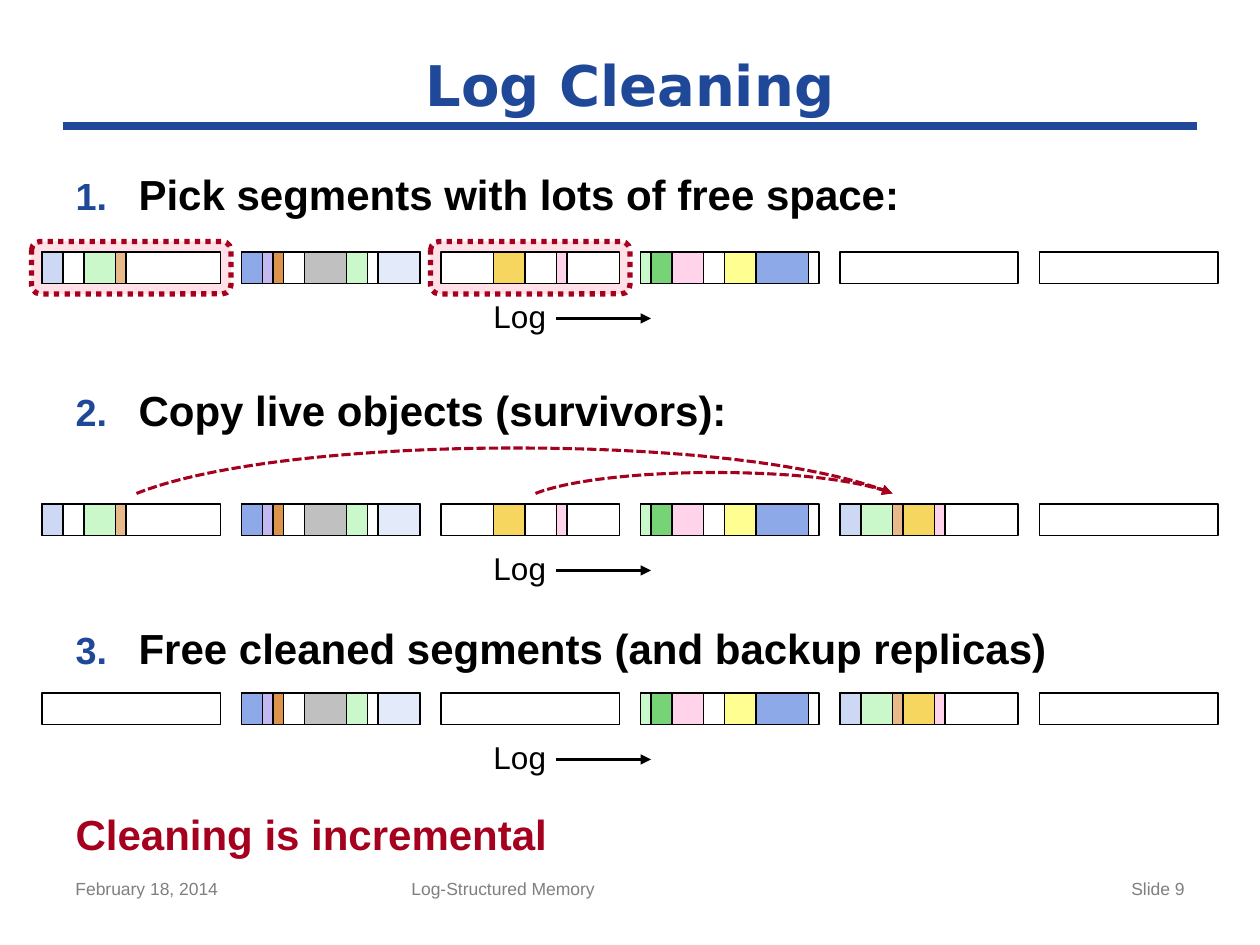
from dataclasses import dataclass

from lxml.etree import SubElement
from pptx import Presentation
from pptx.dml.color import RGBColor
from pptx.enum.dml import MSO_LINE
from pptx.enum.shapes import MSO_CONNECTOR, MSO_SHAPE
from pptx.enum.text import MSO_ANCHOR, MSO_AUTO_SIZE, PP_ALIGN
from pptx.oxml.ns import qn
from pptx.util import Pt


@dataclass(frozen=True)
class Theme:
    heading: str = "1F4899"
    accent: str = "A5001E"
    highlight: str = "FFE1E7"
    ink: str = "000000"
    paper: str = "FFFFFF"
    muted: str = "7F7F7F"
    periwinkle: str = "CCD8F4"
    mint: str = "CAF8CA"
    tan: str = "E8B989"
    gold: str = "F7D65F"
    pink: str = "FFD3E9"
    gray: str = "C0C0C0"
    blue: str = "8DA9E7"
    lilac: str = "C4B8F0"
    orange: str = "DC944C"
    ice: str = "E3EAF9"
    yellow: str = "FFFF91"
    green: str = "76D476"
    title_font: str = "DejaVu Sans"
    body_font: str = "Arial"
    title_size: int = 32
    body_size: int = 24
    label_size: int = 18
    footer_size: int = 10


T = Theme()

UNIT = 6                      # width of the smallest log object
SEGMENT_WIDTH = 17 * UNIT
SEGMENT_PITCH = 19 * UNIT
SEGMENT_HEIGHT = 18
LOG_LEFT = 24

# Live objects of each segment: (offset, width, colour), in units
FIRST = [(0, 2, T.periwinkle), (4, 3, T.mint), (7, 1, T.tan)]
SECOND = [(0, 2, T.blue), (2, 1, T.lilac), (3, 1, T.orange),
          (6, 4, T.gray), (10, 2, T.mint), (13, 4, T.ice)]
THIRD = [(5, 3, T.gold), (11, 1, T.pink)]
FOURTH = [(0, 1, T.mint), (1, 2, T.green), (3, 3, T.pink),
          (8, 3, T.yellow), (11, 5, T.blue)]


def pack(live_objects):
    """Place objects side by side from the start of a segment."""
    packed, offset = [], 0
    for _, width, color in live_objects:
        packed.append((offset, width, color))
        offset += width
    return packed


SURVIVORS = pack(FIRST + THIRD)


def place(shape, left, top, width, height):
    shape.left, shape.top = Pt(left), Pt(top)
    shape.width, shape.height = Pt(width), Pt(height)


def write(paragraph, text, size, color, font=T.body_font, bold=False,
          align=PP_ALIGN.LEFT, before=0):
    paragraph.alignment = align
    paragraph.space_before = Pt(before)
    run = paragraph.add_run()
    run.text = text
    run.font.name, run.font.size, run.font.bold = font, Pt(size), bold
    run.font.color.rgb = RGBColor.from_string(color)


def stroke(shape, color, width, dash=None, arrow=False):
    line = shape.line
    line.color.rgb = RGBColor.from_string(color)
    line.width = Pt(width)
    if dash:
        line.dash_style = dash
    if arrow:
        SubElement(line._get_or_add_ln(), qn("a:tailEnd"), type="triangle")


def add_box(slide, left, top, width, height, fill, color=T.ink, weight=1,
            dash=None, kind=MSO_SHAPE.RECTANGLE):
    box = slide.shapes.add_shape(kind, Pt(left), Pt(top), Pt(width), Pt(height))
    box.shadow.inherit = False
    box.fill.solid()
    box.fill.fore_color.rgb = RGBColor.from_string(fill)
    stroke(box, color, weight, dash)


def add_line(slide, start, end, color, weight, arrow=False):
    line = slide.shapes.add_connector(
        MSO_CONNECTOR.STRAIGHT, *(Pt(value) for value in (*start, *end)))
    stroke(line, color, weight, arrow=arrow)
    SubElement(line._element.spPr, qn("a:effectLst"))


def add_text(slide, left, top, width, height, text, inset=True, **style):
    textbox = slide.shapes.add_textbox(Pt(left), Pt(top), Pt(width), Pt(height))
    frame = textbox.text_frame
    frame.word_wrap = inset
    if not inset:
        frame.margin_left = frame.margin_right = 0
        frame.margin_top = frame.margin_bottom = 0
    write(frame.paragraphs[0], text, **style)


def add_title(slide, left, top, width, height):
    title = slide.shapes.title
    place(title, left, top, width, height)
    title.text_frame.vertical_anchor = MSO_ANCHOR.MIDDLE
    write(title.text_frame.paragraphs[0], "Log Cleaning", T.title_size,
          T.heading, font=T.title_font, bold=True, align=PP_ALIGN.CENTER)
    bottom = top + height
    add_line(slide, (left, bottom), (left + width, bottom), T.heading, 4.5)


def number(paragraph):
    properties = paragraph._p.get_or_add_pPr()
    properties.set("marL", str(Pt(36)))
    properties.set("indent", str(Pt(-36)))
    bullet_color = SubElement(properties, qn("a:buClr"))
    SubElement(bullet_color, qn("a:srgbClr"), val=T.heading)
    SubElement(properties, qn("a:buSzPct"), val="90000")
    SubElement(properties, qn("a:buFont"), typeface=T.body_font)
    SubElement(properties, qn("a:buAutoNum"), type="arabicPeriod")


def add_steps(slide, left, top, width, height):
    body = slide.placeholders[1]
    place(body, left, top, width, height)
    frame = body.text_frame
    frame.auto_size = MSO_AUTO_SIZE.NONE
    frame.margin_top = Pt(6)
    steps = [("Pick segments with lots of free space:", 0),
             ("Copy live objects (survivors):", 94.7),
             ("Free cleaned segments (and backup replicas)", 107.3)]
    for index, (step, before) in enumerate(steps):
        paragraph = frame.paragraphs[0] if index == 0 else frame.add_paragraph()
        write(paragraph, step, T.body_size, T.ink, bold=True, before=before)
        number(paragraph)
    conclusion = frame.add_paragraph()
    write(conclusion, "Cleaning is incremental", T.body_size, T.accent,
          bold=True, before=77.5)
    properties = conclusion._p.get_or_add_pPr()
    properties.set("marL", "0")
    properties.set("indent", "0")
    SubElement(properties, qn("a:buNone"))


def add_log(slide, left, top, segments, picked=()):
    """Draw a row of segments; those whose index is picked get a dotted frame."""
    for index, live_objects in enumerate(segments):
        start = left + index * SEGMENT_PITCH
        if index in picked:
            add_box(slide, start - UNIT, top - UNIT, SEGMENT_WIDTH + 2 * UNIT,
                    SEGMENT_HEIGHT + 2 * UNIT, T.highlight, T.accent, 3,
                    MSO_LINE.ROUND_DOT, MSO_SHAPE.ROUNDED_RECTANGLE)
        add_box(slide, start, top, SEGMENT_WIDTH, SEGMENT_HEIGHT, T.paper)
        for offset, width, color in live_objects:
            add_box(slide, start + offset * UNIT, top, width * UNIT,
                    SEGMENT_HEIGHT, color)
    add_text(slide, left + 258, top + 26, 30, 21.6, "Log", inset=False,
             size=T.label_size, color=T.ink, align=PP_ALIGN.CENTER)
    add_line(slide, (left + 294, top + 38), (left + 348, top + 38), T.ink, 1.5,
             arrow=True)


def add_copy_arc(slide, left, bottom, width, height):
    """Draw a dashed arrow as two mirrored cubic curves inside the box."""
    shares = [(0.1, 2 / 3), (0.3, 1), (0.5, 1), (0.7, 1), (0.9, 2 / 3), (1, 0)]
    builder = slide.shapes.build_freeform(Pt(left), Pt(bottom))
    builder.add_line_segments(
        [(Pt(left + width * across), Pt(bottom - height * rise))
         for across, rise in shares], close=False)
    arc = builder.convert_to_shape()
    outline = arc._element.spPr.find(".//" + qn("a:path"))
    lines = outline.findall(qn("a:lnTo"))
    for first in (0, 3):
        curve = SubElement(outline, qn("a:cubicBezTo"))
        for line in lines[first:first + 3]:
            curve.append(line[0])
            outline.remove(line)
    arc.shadow.inherit = False
    arc.fill.background()
    stroke(arc, T.accent, 1.75, MSO_LINE.SQUARE_DOT, arrow=True)
    arc.line._get_or_add_ln().find(qn("a:prstDash")).set("val", "sysDash")


def add_footer(slide, left, top, width, height):
    style = dict(size=T.footer_size, color=T.muted)
    side = 168
    add_text(slide, left, top, side, height, "February 18, 2014", **style)
    add_text(slide, left + 192, top, 270, height, "Log-Structured Memory", **style)
    add_text(slide, left + width - side, top, side, height, "Slide 9",
             align=PP_ALIGN.RIGHT, **style)


def main():
    deck = Presentation()
    deck.slide_width, deck.slide_height = Pt(720), Pt(540)
    slide = deck.slides.add_slide(deck.slide_layouts[1])
    add_title(slide, 36, 24, 648, 48)
    add_steps(slide, 36, 90, 648, 392)
    add_log(slide, LOG_LEFT, 144, [FIRST, SECOND, THIRD, FOURTH, [], []],
            picked=(0, 2))
    add_log(slide, LOG_LEFT, 288, [FIRST, SECOND, THIRD, FOURTH, SURVIVORS, []])
    add_copy_arc(slide, 78, 282, 432, 26)
    add_copy_arc(slide, 306, 282, 204, 12)
    add_log(slide, LOG_LEFT, 396, [[], SECOND, [], FOURTH, SURVIVORS, []])
    add_footer(slide, 36, 498, 648, 31)
    deck.save("out.pptx")


if __name__ == "__main__":
    main()
